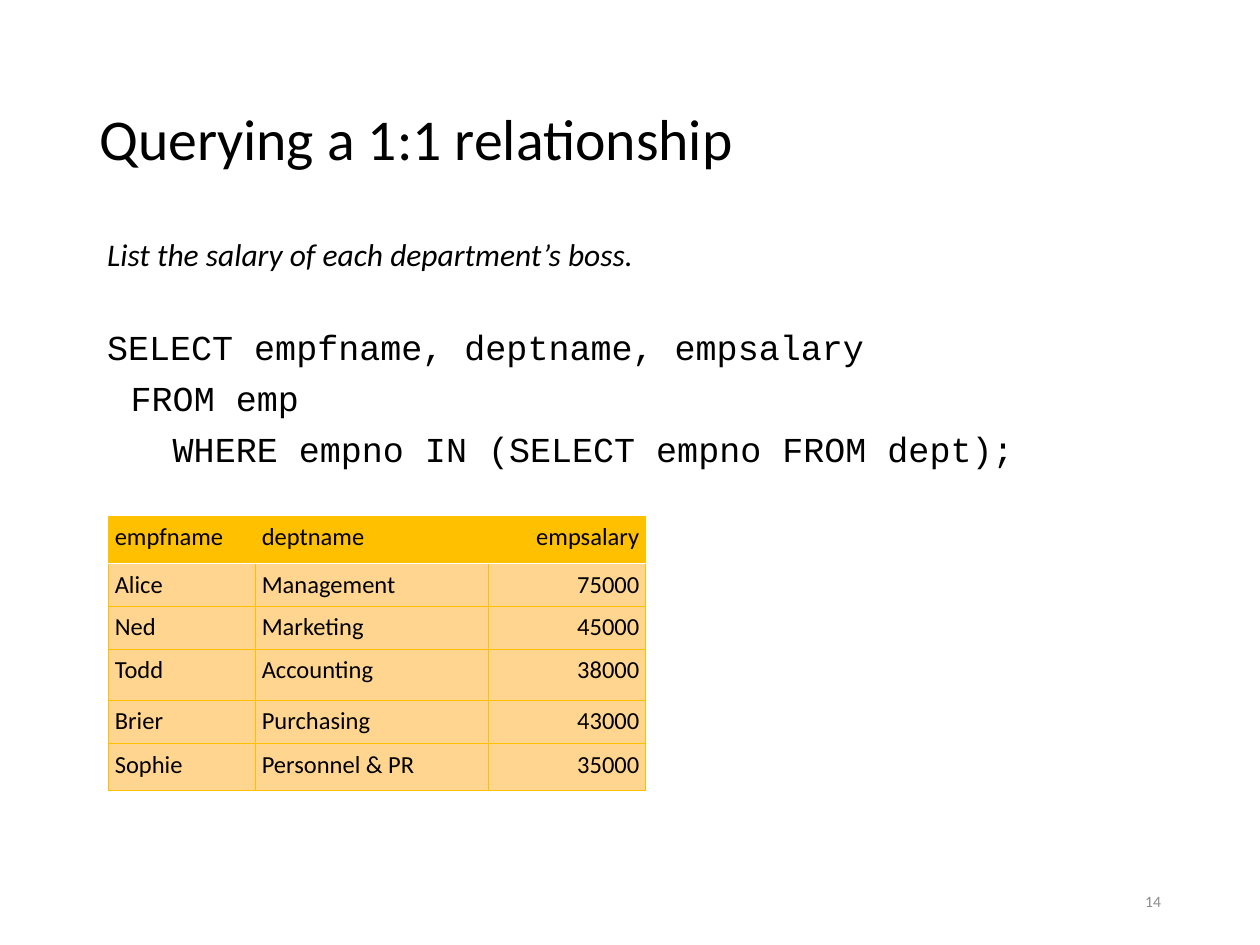
"""Build a slide that queries a 1:1 relationship in SQL and shows the result table."""
from lxml.etree import SubElement
from pptx import Presentation
from pptx.dml.color import RGBColor
from pptx.enum.text import MSO_ANCHOR, PP_ALIGN
from pptx.oxml.ns import qn
from pptx.util import Pt


def style(paragraph, font_name, size, color="000000", italic=False):
    for span in paragraph.runs:
        span.font.name = font_name
        span.font.size = Pt(size)
        span.font.italic = italic
        span.font.color.rgb = RGBColor.from_string(color)


def add_border(cell, side, color, width):
    line = SubElement(cell._tc.get_or_add_tcPr(), qn(f"a:{side}"), w=str(Pt(width)))
    fill = SubElement(line, qn("a:solidFill"))
    SubElement(fill, qn("a:srgbClr"), val=color)


deck = Presentation()
deck.slide_width, deck.slide_height = Pt(720), Pt(540)
page = deck.slides.add_slide(deck.slide_layouts[1])

title = page.shapes.title
title.left, title.top, title.width, title.height = Pt(49.5), Pt(28.75), Pt(621), Pt(104.4)
title.text_frame.text = "Querying a 1:1 relationship"
title.text_frame.vertical_anchor = MSO_ANCHOR.MIDDLE
heading = title.text_frame.paragraphs[0]
heading.alignment = PP_ALIGN.LEFT
heading.line_spacing = 0.9
style(heading, "Calibri", 33)

body = page.placeholders[1]
body.left, body.top, body.width, body.height = Pt(54), Pt(133.2), Pt(612), Pt(324)
body_lines = [
    ("List the salary of each department’s boss.", "Calibri", 18, True, 0, 7.5),
    ("SELECT empfname, deptname, empsalary", "Courier New", 20, False, 0, 32.5),
    ("FROM emp", "Courier New", 20, False, 13.5, 7.5),
    ("WHERE empno IN (SELECT empno FROM dept);", "Courier New", 20, False, 37.5, 7.5),
]
body.text_frame.text = "\n".join(line[0] for line in body_lines)
for paragraph, (_, font_name, size, italic, indent, gap) in zip(body.text_frame.paragraphs, body_lines):
    paragraph.line_spacing = 0.9
    paragraph.space_before = Pt(gap)
    properties = paragraph._p.get_or_add_pPr()
    properties.set("marL", str(Pt(indent)))
    properties.set("indent", "0")
    SubElement(properties, qn("a:buNone"))
    style(paragraph, font_name, size, italic=italic)

number_box = page.shapes.add_textbox(Pt(508.5), Pt(500.5), Pt(162), Pt(28.75))
number_box.text_frame.word_wrap = True
number_box.text_frame.vertical_anchor = MSO_ANCHOR.MIDDLE
number_box.text_frame.text = "14"
number = number_box.text_frame.paragraphs[0]
number.alignment = PP_ALIGN.RIGHT
style(number, "Calibri", 9, "8C8C8C")

salary_rows = [
    ("empfname", "deptname", "empsalary"),
    ("Alice", "Management", "75000"),
    ("Ned", "Marketing", "45000"),
    ("Todd", "Accounting", "38000"),
    ("Brier", "Purchasing", "43000"),
    ("Sophie", "Personnel & PR", "35000"),
]
column_widths = [84, 133, 90]
row_heights = [27, 24.5, 24.5, 29, 25, 27]
table = page.shapes.add_table(
    len(row_heights), len(column_widths), Pt(62), Pt(295), Pt(sum(column_widths)), Pt(sum(row_heights))
).table
for column, width in zip(table.columns, column_widths):
    column.width = Pt(width)
for row_index, (row, height, values) in enumerate(zip(table.rows, row_heights, salary_rows)):
    row.height = Pt(height)
    for column_index, (cell, value) in enumerate(zip(row.cells, values)):
        cell.margin_left = cell.margin_right = cell.margin_top = cell.margin_bottom = Pt(3.6)
        cell.text_frame.text = value
        paragraph = cell.text_frame.paragraphs[0]
        paragraph.alignment = PP_ALIGN.RIGHT if column_index == 2 else PP_ALIGN.LEFT
        style(paragraph, "Calibri", 14)
        for side in ("lnL", "lnR", "lnT", "lnB"):
            below_header = (row_index, side) in ((0, "lnB"), (1, "lnT"))
            add_border(cell, side, *(("FFFFFF", 1) if below_header else ("FFC000", 0.5)))
        cell.fill.solid()
        cell.fill.fore_color.rgb = RGBColor.from_string("FFC000" if row_index == 0 else "FFD58F")

deck.save("out.pptx")
